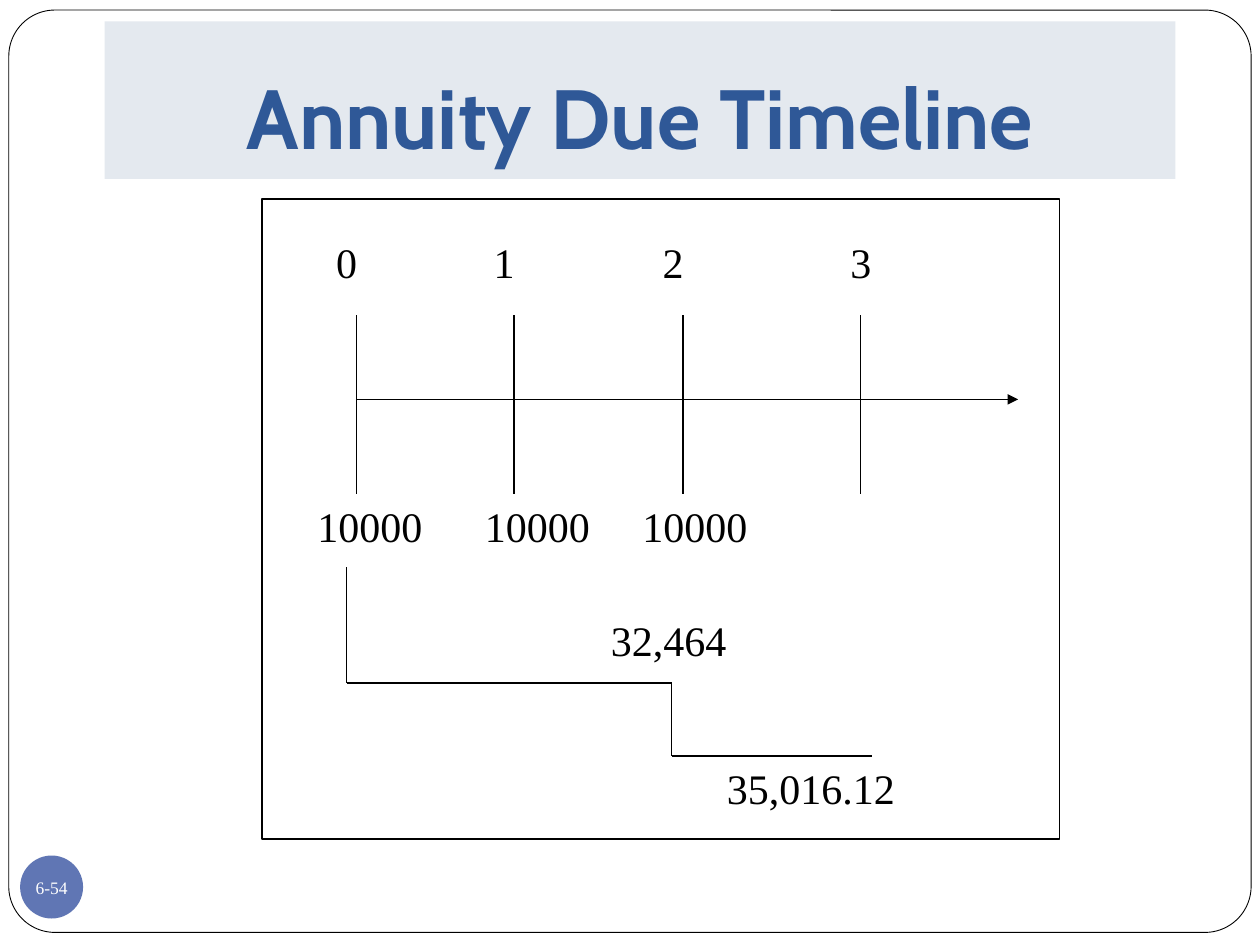
import pptx
import pptx.dml.color
import pptx.enum.shapes
import pptx.enum.text
import pptx.oxml.ns
import pptx.util
from lxml import etree

Inches, Pt = pptx.util.Inches, pptx.util.Pt
RGBColor = pptx.dml.color.RGBColor
SHAPE = pptx.enum.shapes.MSO_SHAPE
ANCHOR = pptx.enum.text.MSO_ANCHOR
ALIGN = pptx.enum.text.PP_ALIGN
qn = pptx.oxml.ns.qn

BLACK = RGBColor(0x00, 0x00, 0x00)
WHITE = RGBColor(0xFF, 0xFF, 0xFF)
NAVY = RGBColor(0x2F, 0x58, 0x97)
PALE = RGBColor(0xE4, 0xE9, 0xEF)
BLUE = RGBColor(0x60, 0x76, 0xB4)

# Content: text and font formats
TITLE = "Annuity Due Timeline"
PAGE = "6-54"
TITLE_FONT = {"name": "Cabin", "size": Pt(48), "bold": True}
PAGE_FONT = {"name": "Times New Roman", "size": Pt(10)}
LABEL_FONT = {"name": "Times New Roman", "size": Pt(24)}

# Labels: text, (left, top, width, height), tab stops from the text edge
LABELS = [
    ("\t0\t1\t2\t3", (2.42, 1.83, 5, 0.5), (0.15, 1.4, 2.74, 4.23)),
    ("10000\t10000\t10000", (2.42, 3.92, 5.08, 0.5), (1.33, 2.58)),
    ("32,464", (4.75, 4.83, 1.5, 0.5), ()),
    ("35,016.12", (5.67, 6, 1.92, 0.5), ()),
]

# Timeline axis, its period ticks, and the stepped value path
TICKS = [2.83, 4.08, 5.42, 6.83]
TICK_TOP, TICK_BOTTOM = 2.5, 3.92
AXIS_Y, AXIS_END = 3.17, 8.08
STEPS = [(2.75, 4.5), (2.75, 5.42), (5.33, 5.42), (5.33, 6), (6.92, 6)]

prs = pptx.Presentation()
prs.slide_width, prs.slide_height = Inches(10), Inches(7.5)
s = prs.slides.add_slide(prs.slide_layouts[6])


def add_box(kind, box, fill, line_width=None):
    sp = s.shapes.add_shape(kind, *map(Inches, box))
    sp.shadow.inherit = False
    sp.fill.solid()
    sp.fill.fore_color.rgb = fill
    if line_width:
        sp.line.color.rgb = BLACK
        sp.line.width = Pt(line_width)
    else:
        sp.line.fill.background()
    return sp


def write(sp, text, font, color, align, **frame):
    tf = sp.text_frame
    for name, value in frame.items():
        setattr(tf, name, value)
    p = tf.paragraphs[0]
    p.alignment = align
    r = p.add_run()
    r.text = text
    for name, value in font.items():
        setattr(r.font, name, value)
    r.font.color.rgb = color
    return p


def add_line(start, end, arrow=False):
    line = s.shapes.add_connector(pptx.enum.shapes.MSO_CONNECTOR.STRAIGHT,
                                  *map(Inches, start + end))
    line.line.color.rgb = BLACK
    line.line.width = Pt(1)
    if arrow:
        etree.SubElement(line.line._get_or_add_ln(), qn("a:tailEnd"), type="triangle")
    etree.SubElement(line._element.spPr, qn("a:effectLst"))


# Slide border and page number
border = add_box(SHAPE.ROUNDED_RECTANGLE, (0.07, 0.08, 9.86, 7.32), WHITE, 0.5)
border.adjustments[0] = 0.05
badge = add_box(SHAPE.OVAL, (0.16, 6.79, 0.5, 0.5), BLUE)
write(badge, PAGE, PAGE_FONT, WHITE, ALIGN.CENTER,
      vertical_anchor=ANCHOR.MIDDLE, word_wrap=False, margin_left=0,
      margin_right=0, margin_top=0, margin_bottom=0)

# Diagram frame and title band
add_box(SHAPE.RECTANGLE, (2.08, 1.58, 6.33, 5.08), WHITE, 0.75)
band = add_box(SHAPE.RECTANGLE, (0.83, 0.17, 8.5, 1.25), PALE)
write(band, TITLE, TITLE_FONT, NAVY, ALIGN.CENTER, word_wrap=True,
      vertical_anchor=ANCHOR.BOTTOM, margin_bottom=Inches(0.1))

# Timeline
add_line((TICKS[0], AXIS_Y), (AXIS_END, AXIS_Y), arrow=True)
for x in TICKS:
    add_line((x, TICK_TOP), (x, TICK_BOTTOM))

# Value path
for start, end in zip(STEPS, STEPS[1:]):
    add_line(start, end)

# Labels
for text, box, stops in LABELS:
    sp = s.shapes.add_textbox(*map(Inches, box))
    p = write(sp, text, LABEL_FONT, BLACK, ALIGN.LEFT, word_wrap=True,
              vertical_anchor=ANCHOR.MIDDLE)
    if stops:
        tabs = etree.SubElement(p._p.get_or_add_pPr(), qn("a:tabLst"))
        for stop in stops:
            etree.SubElement(tabs, qn("a:tab"), pos=str(Inches(stop)), algn="l")

prs.save("out.pptx")
